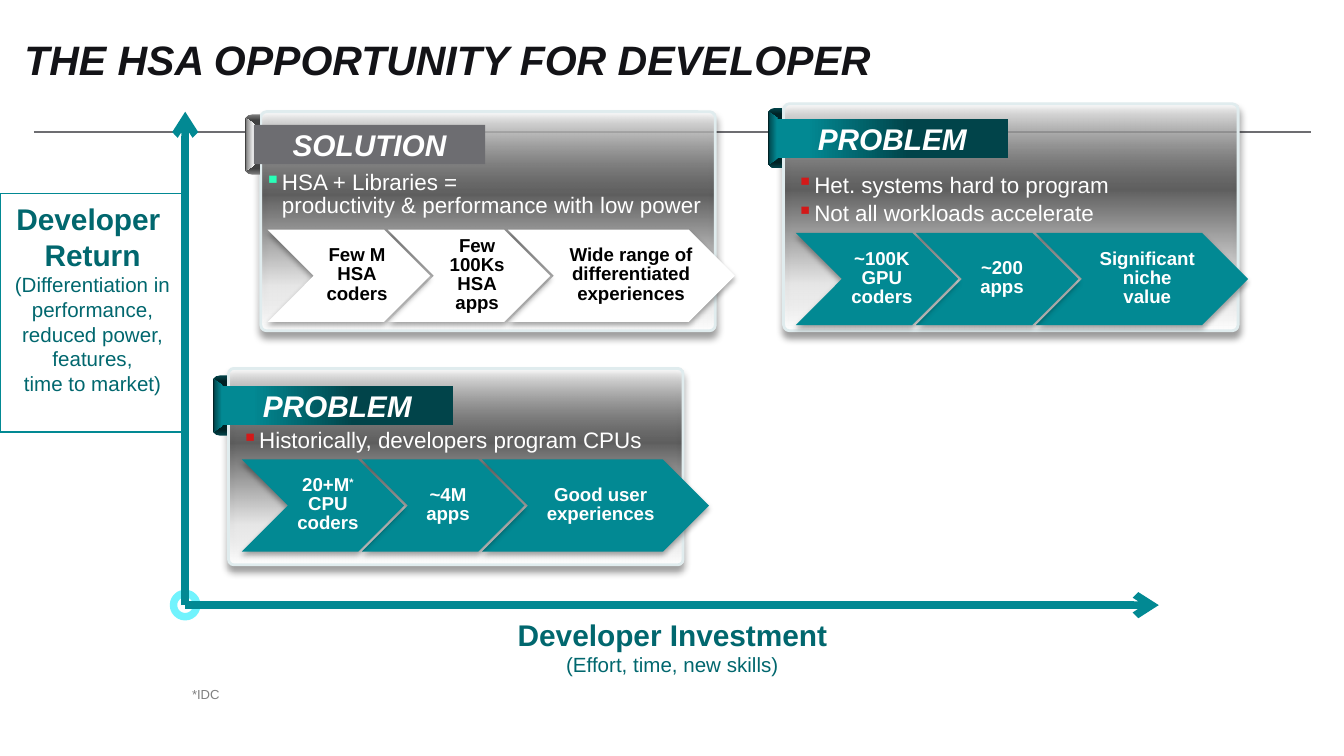
from dataclasses import dataclass

from lxml.etree import SubElement
from pptx import Presentation
from pptx.dml.color import RGBColor
from pptx.enum.shapes import MSO_CONNECTOR, MSO_SHAPE
from pptx.enum.text import MSO_ANCHOR, PP_ALIGN
from pptx.oxml.ns import qn
from pptx.util import Cm, Pt


@dataclass(frozen=True)
class Theme:
    """Colours, gradients and type sizes of the slide."""
    font: str = "Arial"
    white: str = "FFFFFF"
    black: str = "000000"
    title: str = "131317"
    teal: str = "028993"
    label: str = "01676E"
    grey: str = "6D6D71"
    note: str = "808080"
    ring: str = "71F3FD"
    edge: str = "E0ECEE"
    red: str = "D31919"
    green: str = "29FFB8"
    title_size: int = 22
    heading_size: int = 16
    bullet_size: int = 12
    caption_size: int = 11
    step_size: int = 10
    note_size: int = 7
    panel: tuple = ((0, "FFFFFF", 100), (21, "FFFFFF", 50), (62, "000000", 52), (100, "FFFFFF", 82))
    teal_banner: tuple = ((0, "028993", 100), (13, "028993", 100), (57, "01444A", 100))
    teal_fold: tuple = ("01444A", "002225", "028993")
    grey_fold: tuple = ("808080", "404040", "FFFFFF")


THEME = Theme()


@dataclass(frozen=True)
class Card:
    """Content and look of one problem or solution card."""
    heading: str
    bullets: tuple
    steps: tuple
    bullet_box: tuple
    steps_at: tuple
    banner_drop: float
    last_width: float = 4.29
    bullet_gap: int = 6
    label_shift: float = 0.17
    bullet_color: str = THEME.red
    step_fill: str = THEME.teal
    step_text: str = THEME.white
    banner: object = THEME.teal_banner
    fold: tuple = THEME.teal_fold


def write(paragraph, text, size, color, bold=False, italic=False, raised=False, align=None):
    """Add formatted text to a paragraph, with a line break at each newline."""
    if align is not None:
        paragraph.alignment = align
    for index, line in enumerate(text.split("\n")):
        if index:
            paragraph.add_line_break()
            line_break = paragraph._p.findall(qn("a:br"))[-1]
            SubElement(line_break, qn("a:rPr"), sz=str(size * 100))
        if not line:
            continue
        run = paragraph.add_run()
        run.text = line
        font = run.font
        font.name, font.size, font.bold, font.italic = THEME.font, Pt(size), bold, italic
        font.color.rgb = RGBColor.from_string(color)
        if raised:
            font._element.set("baseline", "30000")


def set_frame(shape, insets=(0.25, 0.13, 0.25, 0.13), anchor=MSO_ANCHOR.TOP, wrap=True):
    """Set the insets, anchor and wrapping of a shape and return its text frame."""
    frame = shape.text_frame
    frame.word_wrap, frame.vertical_anchor = wrap, anchor
    frame.margin_left, frame.margin_top, frame.margin_right, frame.margin_bottom = map(Cm, insets)
    return frame


def add_text_box(slide, box, **frame_format):
    """Add a text box and return its text frame."""
    return set_frame(slide.shapes.add_textbox(*map(Cm, box)), **frame_format)


def next_paragraph(frame, index):
    """Return the first paragraph of a frame, or a new one after it."""
    return frame.add_paragraph() if index else frame.paragraphs[0]


def fill_gradient(shape, stops, angle):
    """Fill a shape with a linear gradient of (position, colour, opacity) stops."""
    shape.fill.gradient()
    gradient = shape._element.spPr.find(qn("a:gradFill"))
    stop_list = gradient.find(qn("a:gsLst"))
    stop_list.clear()
    for position, color, opacity in stops:
        stop = SubElement(stop_list, qn("a:gs"), pos=str(position * 1000))
        tint = SubElement(stop, qn("a:srgbClr"), val=color)
        if opacity < 100:
            SubElement(tint, qn("a:alpha"), val=str(opacity * 1000))
    gradient.find(qn("a:lin")).set("ang", str(angle * 60000))


def add_figure(slide, kind, box, fill=None, angle=0, line=None, width=1, rotation=0, adjust=(), shadow=None):
    """Add a preset shape with a plain, gradient or empty fill."""
    shape = slide.shapes.add_shape(kind, *map(Cm, box))
    shape.rotation = rotation
    for index, value in enumerate(adjust):
        shape.adjustments[index] = value
    if fill is None:
        shape.fill.background()
    elif isinstance(fill, str):
        shape.fill.solid()
        shape.fill.fore_color.rgb = RGBColor.from_string(fill)
    else:
        fill_gradient(shape, fill, angle)
    if line:
        shape.line.color.rgb = RGBColor.from_string(line)
        shape.line.width = Pt(width)
    else:
        shape.line.fill.background()
    shape.shadow.inherit = False
    if shadow:
        opacity, blur, distance = shadow
        effects = shape._element.spPr.find(qn("a:effectLst"))
        outer = SubElement(effects, qn("a:outerShdw"), blurRad=str(Pt(blur)), dist=str(Pt(distance)),
                           dir="5400000", algn="t", rotWithShape="0")
        tint = SubElement(outer, qn("a:srgbClr"), val=THEME.black)
        SubElement(tint, qn("a:alpha"), val=str(opacity * 1000))
    return shape


def add_line(slide, start, end, color, width, arrow=False):
    """Add a straight line, with an open arrowhead at its end if asked."""
    line = slide.shapes.add_connector(MSO_CONNECTOR.STRAIGHT, *map(Cm, start + end))
    line.line.color.rgb = RGBColor.from_string(color)
    line.line.width = Pt(width)
    if arrow:
        SubElement(line.line._get_or_add_ln(), qn("a:tailEnd"), type="arrow")
    SubElement(line._element.spPr, qn("a:effectLst"))


def add_banner(slide, left, top, card):
    """Draw the ribbon fold and the heading of a card."""
    dark, deep, light = card.fold
    add_figure(slide, MSO_SHAPE.ROUND_2_SAME_RECTANGLE, (left - 0.6, top + 0.23, 1.14, 0.28),
               [(0, dark, 100), (10, deep, 100), (90, deep, 100), (100, dark, 100)],
               rotation=270, adjust=(0.5, 0))
    add_figure(slide, MSO_SHAPE.TRAPEZOID, (left - 0.56, top + 0.28, 0.99, 0.18),
               [(0, dark, 100), (11, light, 100), (100, dark, 100)], 90, rotation=90, adjust=(0.67,))
    ribbon = add_figure(slide, MSO_SHAPE.RECTANGLE, (left, top, 4.37, 0.74), card.banner)
    frame = set_frame(ribbon, (0.64, 0.13, 0.64, 0.13), MSO_ANCHOR.MIDDLE, False)
    write(frame.paragraphs[0], card.heading, THEME.heading_size, THEME.white,
          bold=True, italic=True, align=PP_ALIGN.CENTER)


def add_bullets(slide, box, card):
    """Write the bullet list of a card."""
    frame = add_text_box(slide, box)
    for index, text in enumerate(card.bullets):
        paragraph = next_paragraph(frame, index)
        properties = paragraph._p.get_or_add_pPr()
        properties.set("marL", str(Cm(0.33)))
        properties.set("indent", str(-Cm(0.33)))
        bullet_color = SubElement(properties, qn("a:buClr"))
        SubElement(bullet_color, qn("a:srgbClr"), val=card.bullet_color)
        SubElement(properties, qn("a:buChar"), char="▪")
        paragraph.line_spacing, paragraph.space_after = 0.85, Pt(card.bullet_gap)
        write(paragraph, text, THEME.bullet_size, THEME.white)


def add_steps(slide, left, top, card):
    """Draw the chevrons of a card from right to left with their labels."""
    height = 1.74
    for index in reversed(range(len(card.steps))):
        width = card.last_width if index == len(card.steps) - 1 else 3.07
        step_left = left + index * 2.27
        add_figure(slide, MSO_SHAPE.CHEVRON, (step_left, top, width, height), card.step_fill, shadow=(35, 3.1, 1.8))
        label_box = (step_left + width * card.label_shift, top + 0.14, width * 0.67, height - 0.3)
        frame = add_text_box(slide, label_box, insets=(0.23, 0.08, 0.08, 0.08), anchor=MSO_ANCHOR.MIDDLE)
        paragraph = frame.paragraphs[0]
        paragraph.line_spacing, paragraph.space_after = 0.85, Pt(6)
        for part, text in enumerate(card.steps[index]):
            write(paragraph, text, THEME.step_size, card.step_text, bold=True,
                  raised=part == 1, align=PP_ALIGN.CENTER)


def add_card(slide, box, card):
    """Place a panel with its banner, bullets and steps inside a box."""
    left, top = box[:2]
    add_figure(slide, MSO_SHAPE.ROUNDED_RECTANGLE, box, THEME.panel, 270, THEME.edge, 1.5,
               adjust=(0.027,), shadow=(40, 4, 3))
    add_banner(slide, left - 0.13, top + card.banner_drop, card)
    across, down, width, height = card.bullet_box
    add_steps(slide, left + card.steps_at[0], top + card.steps_at[1], card)
    add_bullets(slide, (left + across, top + down, width, height), card)


def write_caption(frame, headings, details):
    """Write centred bold headings followed by plain detail lines."""
    for index, text in enumerate(headings + details):
        bold = index < len(headings)
        size = THEME.heading_size if bold else THEME.caption_size
        write(next_paragraph(frame, index), text, size, THEME.label, bold=bold, align=PP_ALIGN.CENTER)


def add_axes(slide, box):
    """Draw both axes with their captions around the plot box."""
    left, top, width, height = box
    bottom = top + height
    caption = add_figure(slide, MSO_SHAPE.RECTANGLE, (left - 3.5, top + 1.55, 3.5, 4.5), line=THEME.teal, width=0.75)
    write_caption(set_frame(caption), ("Developer ", "Return"),
                  ("(Differentiation in ", "performance,", "reduced power,", "features,", "time to market)"))
    write_caption(add_text_box(slide, (left + 5.03, bottom + 0.08, 8.36, 1.42)),
                  ("Developer Investment",), ("(Effort, time, new skills)",))
    add_figure(slide, MSO_SHAPE.OVAL, (left - 0.22, bottom - 0.22, 0.44, 0.44), THEME.white, line=THEME.ring, width=4)
    for end in ((left, top), (left + width, bottom)):
        add_line(slide, (left, bottom), end, THEME.teal, 4, arrow=True)


SOLUTION = Card("SOLUTION", ("HSA + Libraries =\nproductivity & performance with low power",),
                (("Few M\nHSA\ncoders",), ("Few 100Ks\nHSA\napps",), ("Wide range of\ndifferentiated\nexperiences",)),
                (-0.18, 1.02, 10.21, 1.12), (0.13, 2.23), 0.25, label_shift=0.19, bullet_color=THEME.green,
                step_fill=THEME.white, step_text=THEME.black, banner=THEME.grey, fold=THEME.grey_fold)
CPU_PROBLEM = Card("PROBLEM", ("Historically, developers program CPUs",),
                   (("20+M", "*", "\nCPU\ncoders"), ("~4M\napps",), ("Good user\nexperiences",)),
                   (0, 1.04, 9.68, 0.69), (0.25, 1.72), 0.33)
GPU_PROBLEM = Card("PROBLEM", ("Het. systems hard to program", "Not all workloads accelerate"),
                   (("~100K\nGPU\ncoders",), ("~200\napps",), ("Significant niche\nvalue",)),
                   (0, 1.22, 8.1, 1.24), (0.23, 2.44), 0.28, last_width=4.01, bullet_gap=3)


def main():
    """Build the slide and save it."""
    presentation = Presentation()
    presentation.slide_width, presentation.slide_height = Cm(25.4), Cm(14.28)
    slide = presentation.slides.add_slide(presentation.slide_layouts[6])
    add_line(slide, (0.64, 2.5), (24.77, 2.5), THEME.grey, 1)
    title = add_text_box(slide, (0.46, 0.58, 24.49, 1.07), insets=(0, 0, 0, 0), anchor=MSO_ANCHOR.MIDDLE)
    write(title.paragraphs[0], "THE HSA OPPORTUNITY FOR DEVELOPER", THEME.title_size, THEME.title,
          bold=True, italic=True)
    add_card(slide, (4.93, 2.11, 8.59, 4.14), SOLUTION)
    add_card(slide, (4.32, 6.96, 8.59, 3.71), CPU_PROBLEM)
    add_card(slide, (14.81, 1.96, 8.59, 4.29), GPU_PROBLEM)
    add_axes(slide, (3.5, 2.11, 18.4, 9.32))
    footnote = add_text_box(slide, (3.38, 12.83, 1.9, 0.56))
    write(footnote.paragraphs[0], "*IDC", THEME.note_size, THEME.note)
    presentation.save("out.pptx")


if __name__ == "__main__":
    main()
